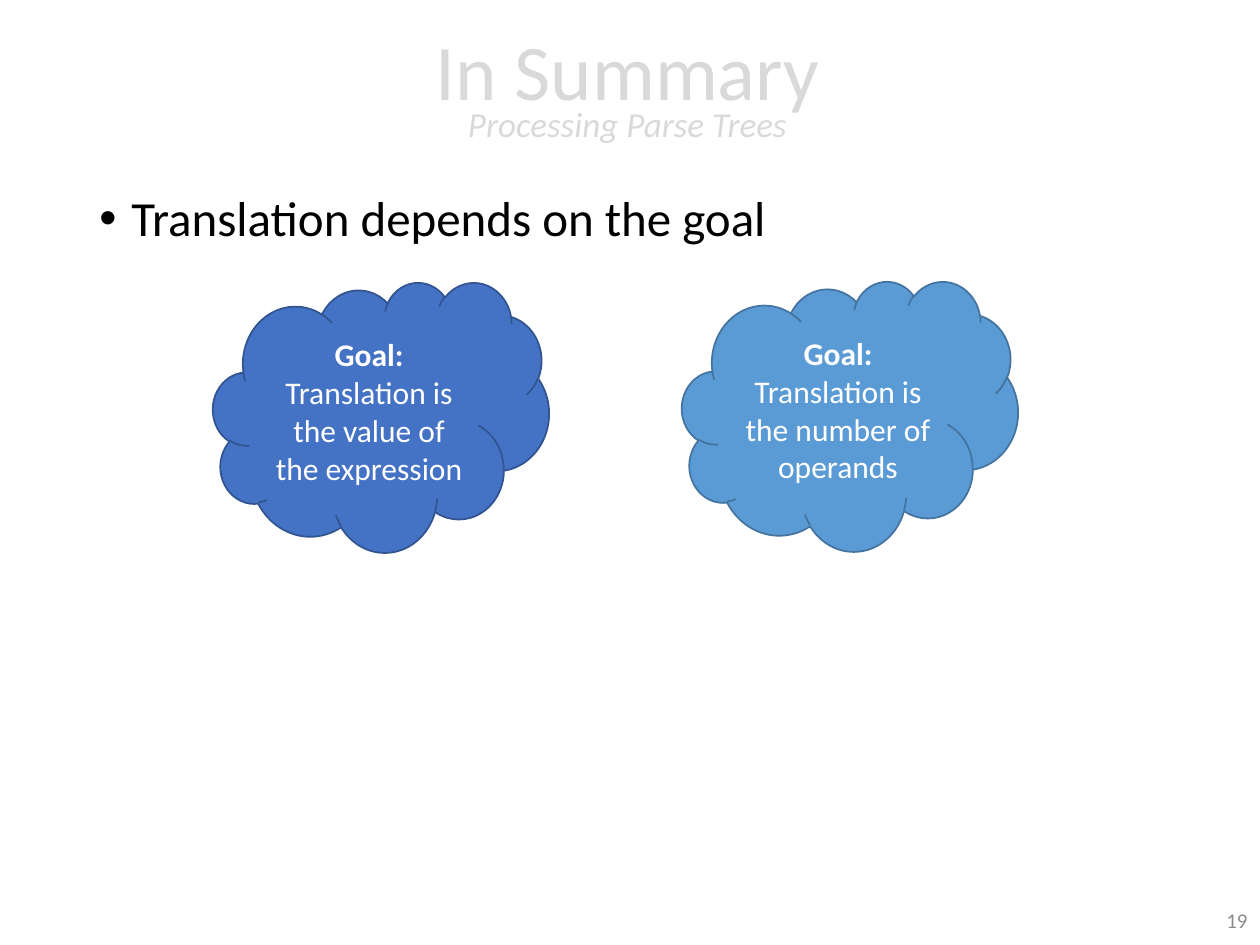
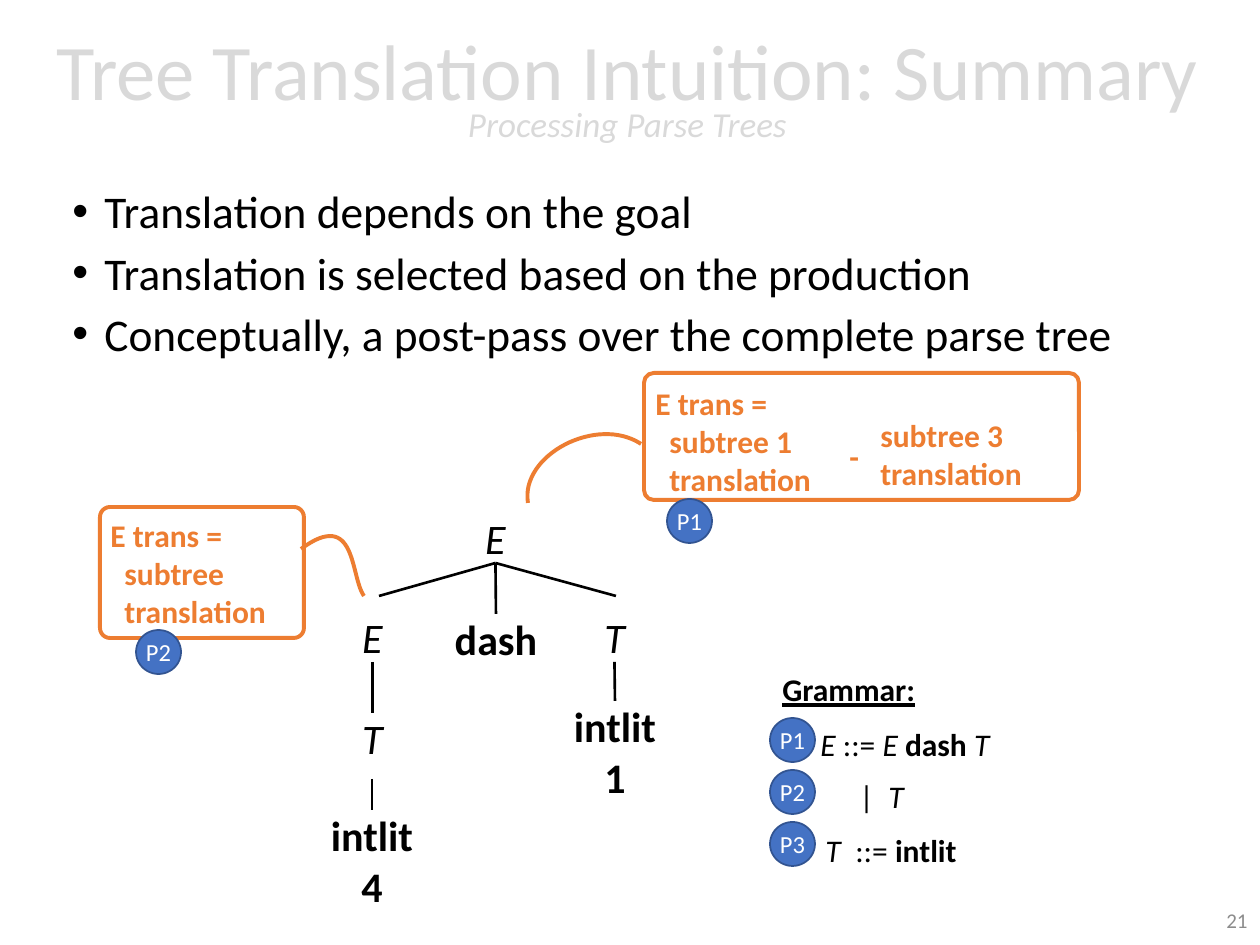
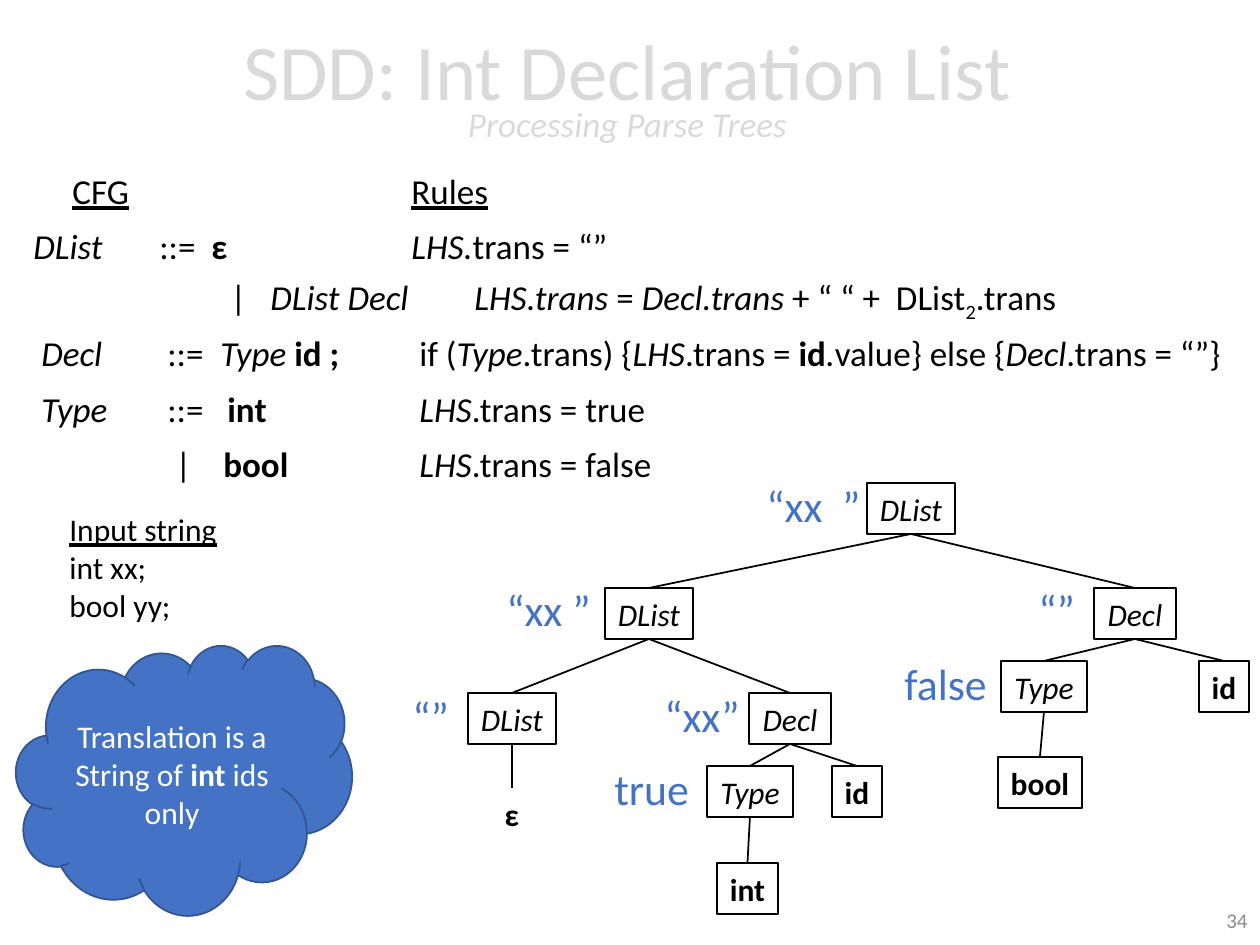
import lxml.etree
import pptx
import pptx.dml.color
import pptx.enum.shapes
import pptx.enum.text
import pptx.oxml.ns
import pptx.util

PX = 7257  # EMU in one px, 126 px to the inch
FONT = "Calibri"
COLORS = {
    "black": "000000", "white": "FFFFFF", "title": "D9D9D9", "number": "8C8C8C",
    "blue": "4472C4", "blue edge": "325491", "sky": "5B9BD5", "sky edge": "43739E",
    "orange": "ED7D31",
}
RGB = {name: pptx.dml.color.RGBColor.from_string(code) for name, code in COLORS.items()}
SHAPE = pptx.enum.shapes.MSO_SHAPE
ALIGN = pptx.enum.text.PP_ALIGN
MIDDLE = pptx.enum.text.MSO_ANCHOR.MIDDLE
qn = pptx.oxml.ns.qn


def add_text(slide, box, paragraphs, size=18, color="black", align=ALIGN.LEFT, wrap=False,
             preset=None, fill=None, edge=None, edge_width=1):
    """Add a text box, or a preset shape, whose paragraphs are lists of (text, style letters)."""
    box = [length * PX for length in box]
    if preset is None:
        holder = slide.shapes.add_textbox(*box)
    else:
        holder = slide.shapes.add_shape(preset, *box)
        holder.shadow.inherit = False
        if fill:
            holder.fill.solid()
            holder.fill.fore_color.rgb = RGB[fill]
        else:
            holder.fill.background()
        holder.line.color.rgb = RGB[edge]
        holder.line.width = pptx.util.Pt(edge_width)
    frame = holder.text_frame
    frame.word_wrap = wrap
    for i, pieces in enumerate(paragraphs):
        paragraph = frame.add_paragraph() if i else frame.paragraphs[0]
        paragraph.alignment = align
        for text, style in pieces:
            run = paragraph.add_run()
            run.text = text
            run.font.name = FONT
            run.font.size = pptx.util.Pt(size)
            run.font.color.rgb = RGB[color]
            run.font.bold = "b" in style
            run.font.italic = "i" in style
            run.font.underline = "u" in style
            if "s" in style:
                run.font._element.set("baseline", "-25000")
    return holder


def add_edge(slide, start, end, width):
    """Draw a tree edge; each end is a node (bottom of parent, top of child) or a px point."""
    edge = slide.shapes.add_connector(pptx.enum.shapes.MSO_CONNECTOR.STRAIGHT, 0, 0, 0, 0)
    if isinstance(start, tuple):
        edge.begin_x, edge.begin_y = start[0] * PX, start[1] * PX
    else:
        edge.begin_connect(start, 2)
    if isinstance(end, tuple):
        edge.end_x, edge.end_y = end[0] * PX, end[1] * PX
    else:
        edge.end_connect(end, 0)
    edge.line.color.rgb = RGB["black"]
    edge.line.width = pptx.util.Pt(width)
    lxml.etree.SubElement(edge._element.spPr, qn("a:effectLst"))


deck = pptx.Presentation()
deck.slide_width = pptx.util.Inches(10)
deck.slide_height = pptx.util.Inches(7.5)

# Shared title, subtitle and page number
slides = []
for heading, number in [("In Summary", "19"), ("Tree Translation Intuition: Summary", "21"),
                        ("SDD: Int Declaration List", "34")]:
    slide = deck.slides.add_slide(deck.slide_layouts[5])
    title = slide.shapes.title
    title.left, title.top, title.width, title.height = 25 * PX, 4 * PX, 1205 * PX, 183 * PX
    title.text_frame.text = heading + "\vProcessing Parse Trees"
    title.text_frame.auto_size = pptx.enum.text.MSO_AUTO_SIZE.NONE
    title.text_frame.vertical_anchor = MIDDLE
    line = title.text_frame.paragraphs[0]
    line.alignment = ALIGN.CENTER
    line.line_spacing = 0.7
    for run, size in zip(line.runs, (45, 20)):
        run.font.name = FONT
        run.font.size = pptx.util.Pt(size)
        run.font.color.rgb = RGB["title"]
    line.runs[1].font.italic = True
    page = add_text(slide, (976, 895, 284, 50), [[(number, "")]], 12, "number",
                    ALIGN.RIGHT, wrap=True)
    page.text_frame.vertical_anchor = MIDDLE
    slides.append(slide)
goals, intuition, declarations = slides

# Bullet lists
goal_point = "Translation depends on the goal"
for slide, box, size, spacing, points in [
    (goals, (87, 188, 1086, 82), 28, 0.9, [goal_point]),
    (intuition, (60, 188, 1143, 192), 25.9, 0.8,
     [goal_point, "Translation is selected based on the production",
      "Conceptually, a post-pass over the complete parse tree"]),
]:
    bullets = add_text(slide, box, [[(point, "")] for point in points], size, wrap=True)
    for paragraph in bullets.text_frame.paragraphs:
        paragraph.line_spacing = spacing
        paragraph.space_before = pptx.util.Pt(10)
        properties = paragraph._p.get_or_add_pPr()
        properties.set("marL", str(32 * PX))
        properties.set("indent", str(-32 * PX))
        lxml.etree.SubElement(properties, qn("a:buFont"), typeface="Arial")
        lxml.etree.SubElement(properties, qn("a:buChar"), char="•")

# Goal clouds
for slide, left, top, fill, paragraphs in [
    (goals, 682, 281, "sky",
     [[("Goal:", "b")], [("Translation is the number of operands", "")]]),
    (goals, 213, 282, "blue",
     [[("Goal:", "b")], [("Translation is the value of the expression", "")]]),
    (declarations, 16, 645, "blue",
     [[("Translation is a String of ", ""), ("int", "b"), (" ids", "")], [("only", "")]]),
]:
    cloud = add_text(slide, (left, top, 336, 270), paragraphs, color="white",
                     align=ALIGN.CENTER, wrap=True, preset=SHAPE.CLOUD,
                     fill=fill, edge=fill + " edge")
    cloud.text_frame.vertical_anchor = MIDDLE

# Parse tree of the subtraction
tree = {}
for key, box, words, style in [
    ("root", (472, 513, 47, 50), ["E"], "i"),
    ("dash", (442, 614, 108, 50), ["dash"], "b"),
    ("left E", (349, 612, 47, 50), ["E"], "i"),
    ("left T", (349, 713, 47, 50), ["T"], "i"),
    ("right T", (591, 612, 47, 50), ["T"], "i"),
    ("four", (318, 810, 108, 102), ["intlit", "4"], "b"),
    ("one", (561, 701, 108, 102), ["intlit", "1"], "b"),
]:
    tree[key] = add_text(intuition, box, [[(word, style)] for word in words], 24,
                         align=ALIGN.CENTER)
    tree[key].text_frame.margin_top = tree[key].text_frame.margin_bottom = 0
for start, end in [
    (tree["root"], (379, 596)), (tree["root"], tree["dash"]), (tree["root"], (616, 596)),
    (tree["left E"], tree["left T"]), ((372, 779), tree["four"]),
    (tree["right T"], tree["one"]),
]:
    add_edge(intuition, start, end, 1.5)

# Translation callouts
for box, words, indented in [
    ((643, 378, 213, 127), ["E trans =", "subtree 1", "translation"], (1, 2)),
    ((854, 410, 213, 89), ["subtree 3", "translation"], (0, 1)),
    ((837, 431, 40, 50), ["-"], ()),
    ((98, 510, 213, 127), ["E trans =", "subtree", "translation"], (1, 2)),
]:
    callout = add_text(intuition, box, [[(word, "b")] for word in words],
                       color="orange", wrap=True)
    for i in indented:
        callout.text_frame.paragraphs[i]._p.get_or_add_pPr().set("marL", str(14 * PX))
for box in [(644, 373, 435, 127), (100, 507, 204, 131)]:
    border = add_text(intuition, box, [], preset=SHAPE.ROUNDED_RECTANGLE,
                      edge="orange", edge_width=2.25)
    border.adjustments[0] = 0.077

# Curved leaders, sampled from cubic curves
STEPS = 32
for controls in [
    [(641, 444), (597, 415), (520, 455), (528, 503)],
    [(301, 549), (357, 508), (350, 576), (364, 596)],
]:
    points = []
    for step in range(STEPS + 1):
        t = step / STEPS
        weights = ((1 - t) ** 3, 3 * t * (1 - t) ** 2, 3 * t ** 2 * (1 - t), t ** 3)
        points.append([sum(w * c[axis] for w, c in zip(weights, controls)) * PX
                       for axis in (0, 1)])
    outline = intuition.shapes.build_freeform(*points[0])
    outline.add_line_segments(points[1:], close=False)
    leader = outline.convert_to_shape()
    leader.shadow.inherit = False
    leader.fill.background()
    leader.line.color.rgb = RGB["orange"]
    leader.line.width = pptx.util.Pt(2.25)

# Grammar and production badges
add_text(intuition, (770, 664, 160, 50), [[("Grammar:", "bu")]], wrap=True)
for box, pieces, stop in [
    ((808, 719, 220, 50),
     [("E ", "i"), ("::=", ""), (" E ", "i"), ("dash", "b"), (" T", "i")], None),
    ((847, 771, 90, 50), [("|\t", ""), ("T", "i")], 29),
    ((813, 825, 190, 50), [("T\t", "i"), ("::= ", ""), ("intlit", "b")], 30),
]:
    production = add_text(intuition, box, [pieces], wrap=True)
    if stop:
        properties = production.text_frame.paragraphs[0]._p.get_or_add_pPr()
        stops = lxml.etree.SubElement(properties, qn("a:tabLst"))
        lxml.etree.SubElement(stops, qn("a:tab"), pos=str(stop * PX), algn="l")
badges = [(f"P{i + 1}", 770, 718 + 52 * i) for i in range(3)]
for label, left, top in badges + [("P2", 136, 630), ("P1", 667, 499)]:
    badge = add_text(intuition, (left, top, 45, 44), [[(label, "")]], 14, "white",
                     ALIGN.CENTER, True, SHAPE.OVAL, "blue", "blue edge")
    frame = badge.text_frame
    frame.vertical_anchor = MIDDLE
    frame.margin_left = frame.margin_right = frame.margin_top = frame.margin_bottom = 0

# Grammar with translation rules: tab stops, space before, pieces
rules = [
    ((39, 378), 10, [("\t", ""), ("CFG", "u"), ("\t", ""), ("Rules", "u")]),
    ((126, 178, 378), 10,
     [("DList", "i"), ("\t::=\t", ""), ("ε\t", "b"), ("LHS.", "i"), ("trans = “”", "")]),
    ((197, 237, 441), 5,
     [("\t|\t", ""), ("DList Decl\tLHS.trans ", "i"), ("= ", ""), ("Decl.trans", "i"),
      (" + “ “ +  DList", ""), ("2", "s"), (".trans", "")]),
    ((8, 134, 187, 386), 10,
     [("\tDecl", "i"), ("\t::=\t", ""), ("Type ", "i"), ("id ;\t", "b"), ("if (", ""),
      ("Type", "i"), (".trans) {", ""), ("LHS", "i"), (".trans = ", ""), ("id", "b"),
      (".", "i"), ("value} else {", ""), ("Decl", "i"), (".trans = “”}", "")]),
    ((8, 134, 194, 386), 10,
     [("\tType", "i"), ("\t::=\t", ""), ("int\t", "b"), ("LHS", "i"), (".trans = true", "")]),
    ((142, 190, 386), 10,
     [("\t|\t", ""), ("bool\t", "b"), ("LHS", "i"), (".trans = false", "")]),
]
rule_list = add_text(declarations, (21, 168, 1218, 624), [rule[2] for rule in rules], 20,
                     wrap=True)
for paragraph, (positions, before, _) in zip(rule_list.text_frame.paragraphs, rules):
    paragraph.line_spacing = 0.9
    paragraph.space_before = pptx.util.Pt(before)
    stops = lxml.etree.SubElement(paragraph._p.get_or_add_pPr(), qn("a:tabLst"))
    for position in positions:
        lxml.etree.SubElement(stops, qn("a:tab"), pos=str(position * PX), algn="l")

add_text(declarations, (57, 504, 174, 127),
         [[("Input string", "u")], [("int xx;", "")], [("bool yy;", "")]])

# Parse tree of the declarations: key, parent, word, style, left, top, width
nodes = {}
for key, parent, word, style, left, top, width in [
    ("list 1", None, "DList", "i", 867, 483, 88),
    ("list 2", "list 1", "DList", "i", 605, 588, 88),
    ("list 3", "list 2", "DList", "i", 468, 693, 88),
    ("epsilon", "list 3", "ε", "b", 492, 788, 40),
    ("xx", "list 2", "Decl", "i", 749, 693, 82),
    ("xx type", "xx", "Type", "i", 707, 766, 86),
    ("xx int", "xx type", "int", "b", 717, 863, 61),
    ("xx id", "xx", "id", "b", 832, 766, 50),
    ("yy", "list 1", "Decl", "i", 1094, 588, 82),
    ("yy type", "yy", "Type", "i", 1001, 661, 86),
    ("yy bool", "yy type", "bool", "b", 998, 757, 84),
    ("yy id", "yy", "id", "b", 1199, 661, 50),
]:
    boxed = {} if key == "epsilon" else {
        "preset": SHAPE.RECTANGLE, "fill": "white", "edge": "black"}
    nodes[key] = add_text(declarations, (left, top, width, 51), [[(word, style)]],
                          align=ALIGN.CENTER, **boxed)
    nodes[key].text_frame.vertical_anchor = MIDDLE
    if parent:
        add_edge(declarations, nodes[parent], nodes[key], 1)

for value, left, top, width in [
    ("“”", 400, 684, 63), ("“xx ”", 494, 577, 111), ("“xx  ”", 754, 473, 121),
    ("“xx”", 652, 683, 102), ("“”", 1026, 577, 63), ("false", 892, 651, 108),
    ("true", 602, 756, 101),
]:
    add_text(declarations, (left, top, width, 66), [[(value, "")]], 25, "blue")

deck.save("out.pptx")
